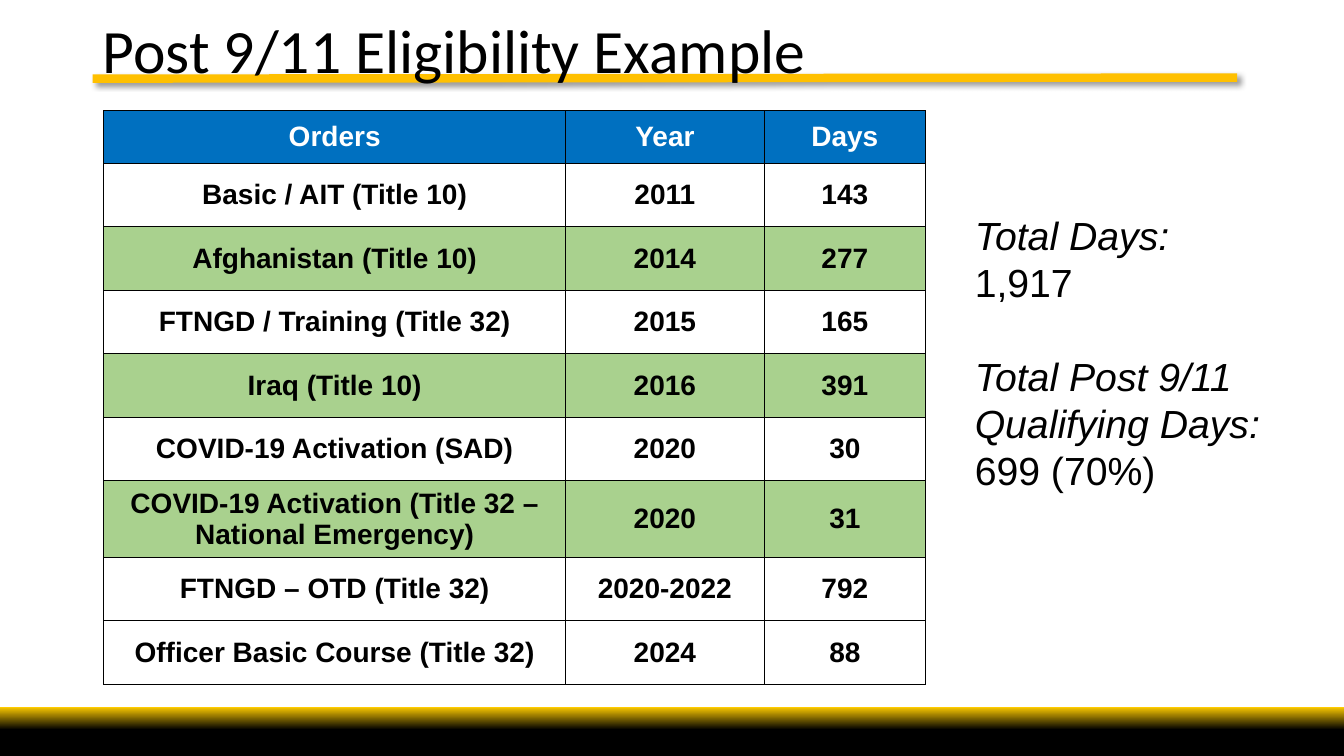
from dataclasses import dataclass

from lxml import etree
from pptx import Presentation
from pptx.dml.color import RGBColor
from pptx.enum.shapes import MSO_CONNECTOR, MSO_SHAPE
from pptx.enum.text import MSO_ANCHOR, PP_ALIGN
from pptx.oxml import parse_xml
from pptx.oxml.ns import nsdecls, qn
from pptx.util import Inches, Pt

STRAIGHT = MSO_CONNECTOR.STRAIGHT
RECTANGLE = MSO_SHAPE.RECTANGLE
TOP, MIDDLE = MSO_ANCHOR.TOP, MSO_ANCHOR.MIDDLE
LEFT, CENTER = PP_ALIGN.LEFT, PP_ALIGN.CENTER
TITLE_ONLY = 5


@dataclass(frozen=True)
class Theme:
    black: str = "000000"
    white: str = "FFFFFF"
    rule: str = "FFC000"
    gold: str = "FFCC00"
    header: str = "0070C0"
    qualifying: str = "A9D18E"
    title_font: str = "Calibri"
    body_font: str = "Arial"
    title_size: int = 44
    table_size: int = 20
    total_size: int = 28


THEME = Theme()

HEADINGS = ("Orders", "Year", "Days")
COLUMN_WIDTHS = (4.58, 1.97, 1.6)
HEADER_HEIGHT, ORDER_HEIGHT, TWO_LINE_HEIGHT = 0.52, 0.63, 0.76
ORDERS = (
    ("Basic / AIT (Title 10)", "2011", "143", False),
    ("Afghanistan (Title 10)", "2014", "277", True),
    ("FTNGD / Training (Title 32)", "2015", "165", False),
    ("Iraq (Title 10)", "2016", "391", True),
    ("COVID-19 Activation (SAD)", "2020", "30", False),
    ("COVID-19 Activation (Title 32 – National Emergency)", "2020", "31", True),
    ("FTNGD – OTD (Title 32)", "2020-2022", "792", False),
    ("Officer Basic Course (Title 32)", "2024", "88", False),
)
TWO_LINE_ROW = 6
TOTALS = (
    ("Total Days:", " 1,917"),
    ("Total Post 9/11 Qualifying Days: ", "699 (70%)"),
)


def color(value):
    return RGBColor.from_string(value)


def add_span(para, text, size, font, ink, bold=False, italic=False):
    span = para.add_run()
    span.text = text
    span.font.size = Pt(size)
    span.font.name = font
    span.font.color.rgb = color(ink)
    span.font.bold = bold
    span.font.italic = italic


def bring_to_front(shape):
    shape.element.getparent().append(shape.element)


def add_title(page, text):
    title = page.shapes.title
    bring_to_front(title)
    title.left, title.top = Inches(0.92), Inches(0.15)
    title.width, title.height = Inches(11.5), Inches(0.9)
    frame = title.text_frame
    frame.word_wrap = True
    frame.vertical_anchor = TOP
    para = frame.paragraphs[0]
    para.alignment = LEFT
    para.line_spacing = 0.9
    add_span(para, text, THEME.title_size, THEME.title_font, THEME.black)


def add_title_rule(page):
    rule = page.shapes.add_connector(
        STRAIGHT, Inches(0.92), Inches(0.78), Inches(12.27), Inches(0.77))
    rule.line.color.rgb = color(THEME.rule)
    rule.line.width = Pt(6)
    rule.element.spPr.append(parse_xml(
        f'<a:effectLst {nsdecls("a")}><a:outerShdw blurRad="{Pt(4)}" '
        f'dist="{Pt(3)}" dir="2700000" algn="tl" rotWithShape="0">'
        f'<a:srgbClr val="{THEME.black}"><a:alpha val="40000"/></a:srgbClr>'
        '</a:outerShdw></a:effectLst>'))


def add_band(page, top, height):
    band = page.shapes.add_shape(
        RECTANGLE, Inches(-0.01), Inches(top), Inches(13.34), Inches(height))
    band.shadow.inherit = False
    band.line.fill.background()
    return band.fill


def add_footer_bands(page):
    fade = add_band(page, 7.01, 0.23)
    fade.gradient()
    fade.gradient_angle = 90
    stops = ((0, THEME.black), (1, THEME.gold))
    for stop, (position, value) in zip(fade.gradient_stops, stops):
        stop.color.rgb = color(value)
        stop.position = position
    base = add_band(page, 7.24, 0.26)
    base.solid()
    base.fore_color.rgb = color(THEME.black)


def add_borders(cell):
    properties = cell._tc.get_or_add_tcPr()
    for index, side in enumerate(("lnL", "lnR", "lnT", "lnB")):
        border = etree.Element(qn(f"a:{side}"), w=str(Pt(1)))
        fill = etree.SubElement(border, qn("a:solidFill"))
        etree.SubElement(fill, qn("a:srgbClr"), val=THEME.black)
        properties.insert(index, border)


def fill_cell(cell, text, ink, background):
    if background:
        cell.fill.solid()
        cell.fill.fore_color.rgb = color(background)
    else:
        cell.fill.background()
    cell.vertical_anchor = MIDDLE
    para = cell.text_frame.paragraphs[0]
    para.alignment = CENTER
    add_span(para, text, THEME.table_size, THEME.body_font, ink, bold=True)
    add_borders(cell)


def add_orders_table(page):
    heights = [HEADER_HEIGHT] + [ORDER_HEIGHT] * len(ORDERS)
    heights[TWO_LINE_ROW] = TWO_LINE_HEIGHT
    table = page.shapes.add_table(
        len(heights), len(HEADINGS), Inches(1.03), Inches(1.1),
        Inches(sum(COLUMN_WIDTHS)), Inches(sum(heights))).table
    for column, width in zip(table.columns, COLUMN_WIDTHS):
        column.width = Inches(width)
    for row, height in zip(table.rows, heights):
        row.height = Inches(height)
    for column, heading in enumerate(HEADINGS):
        fill_cell(table.cell(0, column), heading, THEME.white, THEME.header)
    for row, (*values, qualifies) in enumerate(ORDERS, start=1):
        background = THEME.qualifying if qualifies else None
        for column, value in enumerate(values):
            fill_cell(table.cell(row, column), value, THEME.black, background)


def add_totals(page):
    box = page.shapes.add_textbox(
        Inches(9.57), Inches(2.05), Inches(3.04), Inches(2.93))
    frame = box.text_frame
    frame.word_wrap = True
    for index, (label, amount) in enumerate(TOTALS):
        para = frame.add_paragraph() if index else frame.paragraphs[0]
        if index:
            para.space_before = Pt(33)
        for text, italic in ((label, True), (amount, False)):
            add_span(para, text, THEME.total_size, THEME.body_font,
                     THEME.black, italic=italic)


def main():
    deck = Presentation()
    deck.slide_width, deck.slide_height = Inches(13.33), Inches(7.5)
    page = deck.slides.add_slide(deck.slide_layouts[TITLE_ONLY])
    add_title_rule(page)
    add_footer_bands(page)
    add_title(page, "Post 9/11 Eligibility Example")
    add_orders_table(page)
    add_totals(page)
    deck.save("out.pptx")


if __name__ == "__main__":
    main()
